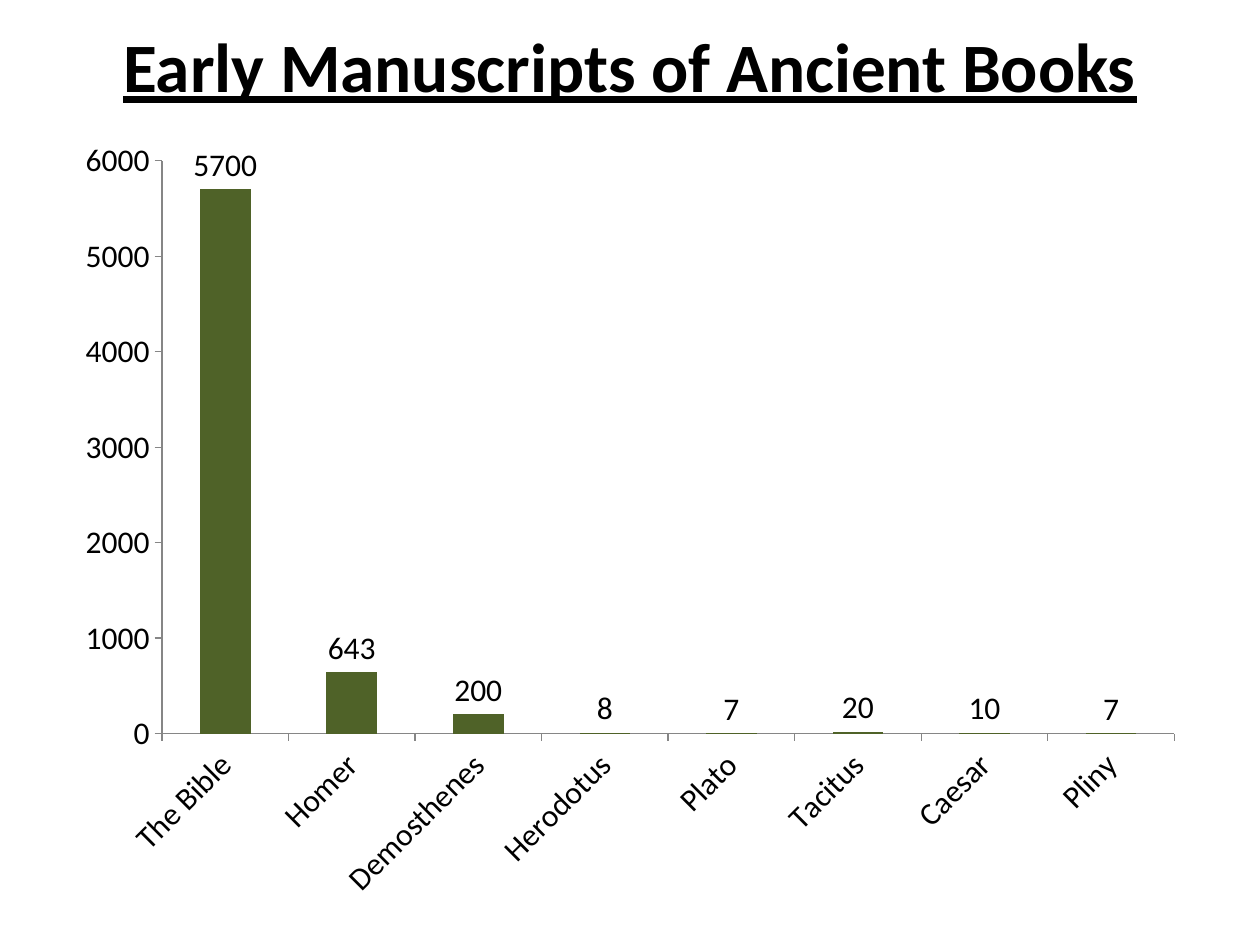
from dataclasses import dataclass

from pptx import Presentation
from pptx import util as u
from pptx.chart import data
from pptx.dml import color
from pptx.enum import chart as ch, text


@dataclass(frozen=True)
class Theme:
    font: str = "Calibri"
    ink: str = "000000"
    bar: str = "4F6228"
    axis: str = "868686"
    title_size: float = 39.6
    chart_size: float = 18


THEME = Theme()
MANUSCRIPTS = {
    "The Bible": 5700,
    "Homer": 643,
    "Demosthenes": 200,
    "Herodotus": 8,
    "Plato": 7,
    "Tacitus": 20,
    "Caesar": 10,
    "Pliny": 7,
}


def rgb(value):
    return color.RGBColor.from_string(value)


def set_font(font, size, **style):
    font.name = THEME.font
    font.size = u.Pt(size)
    font.color.rgb = rgb(THEME.ink)
    for name, value in style.items():
        setattr(font, name, value)


def add_text(s, box, content, size, align=text.PP_ALIGN.CENTER, **style):
    tf = s.shapes.add_textbox(*box).text_frame
    tf.word_wrap = True
    tf.vertical_anchor = text.MSO_ANCHOR.MIDDLE
    p = tf.paragraphs[0]
    p.alignment = align
    r = p.add_run()
    r.text = content
    set_font(r.font, size, **style)


def style_axis(axis):
    axis.has_major_gridlines = False
    axis.major_tick_mark = ch.XL_TICK_MARK.OUTSIDE
    axis.minor_tick_mark = ch.XL_TICK_MARK.NONE
    axis.format.line.color.rgb = rgb(THEME.axis)
    axis.format.line.width = u.Pt(0.75)


def add_manuscript_chart(s, box):
    chart_data = data.CategoryChartData()
    chart_data.categories = list(MANUSCRIPTS)
    chart_data.add_series("Series 1", list(MANUSCRIPTS.values()))
    chart = s.shapes.add_chart(
        ch.XL_CHART_TYPE.COLUMN_CLUSTERED, *box, chart_data
    ).chart
    chart.has_legend = False
    chart.has_title = False
    set_font(chart.font, THEME.chart_size)

    style_axis(chart.category_axis)
    style_axis(chart.value_axis)
    chart.category_axis.tick_labels.font.size = u.Pt(THEME.chart_size)
    chart.category_axis.format.line.width = u.Pt(0.75)
    chart.value_axis.minimum_scale = 0
    chart.value_axis.maximum_scale = 6000
    chart.value_axis.major_unit = 1000

    plot = chart.plots[0]
    plot.gap_width = 150
    plot.vary_by_categories = False
    series = plot.series[0]
    series.format.fill.solid()
    series.format.fill.fore_color.rgb = rgb(THEME.bar)
    labels = series.data_labels
    labels.show_value = True
    labels.position = ch.XL_LABEL_POSITION.OUTSIDE_END
    set_font(labels.font, THEME.chart_size)


def main():
    prs = Presentation()
    prs.slide_width, prs.slide_height = u.Inches(10), u.Inches(7.5)
    s = prs.slides.add_slide(prs.slide_layouts[6])
    left, width = u.Inches(0.5), u.Inches(9)
    add_text(
        s,
        (left, u.Inches(0.08), width, u.Inches(0.87)),
        "Early Manuscripts of Ancient Books",
        THEME.title_size,
        bold=True,
        underline=True,
    )
    add_manuscript_chart(s, (left, u.Inches(1), width, u.Inches(6.25)))
    prs.save("out.pptx")


if __name__ == "__main__":
    main()
